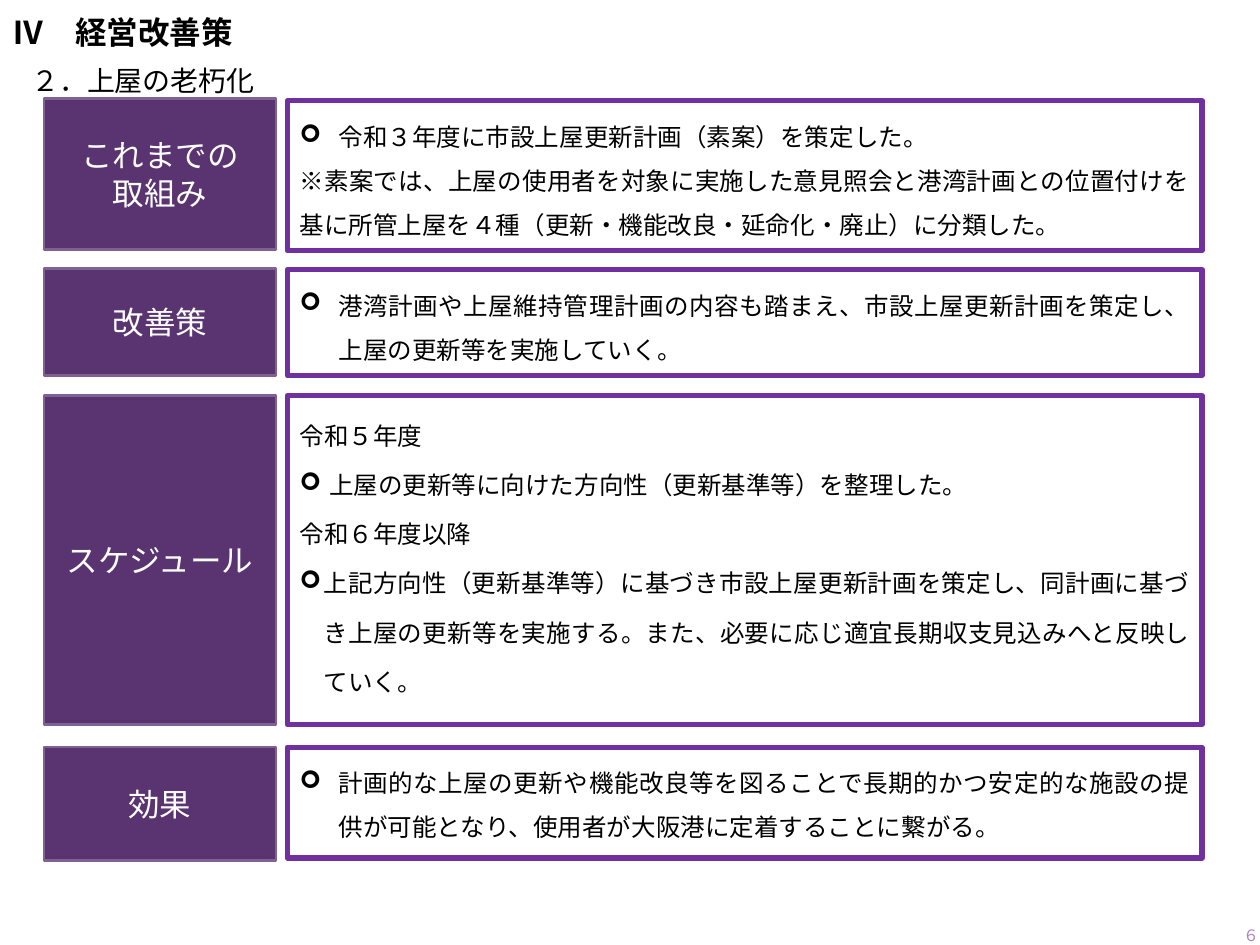
import pptx
import pptx.dml.color
import pptx.enum.lang
import pptx.enum.shapes
import pptx.enum.text
import pptx.oxml.ns
import pptx.util
from lxml import etree

Inches = pptx.util.Inches
Pt = pptx.util.Pt
Align = pptx.enum.text.PP_ALIGN
Anchor = pptx.enum.text.MSO_ANCHOR
qn = pptx.oxml.ns.qn


def color(value):
    return pptx.dml.color.RGBColor.from_string(value)


class PlanSlide:
    """Holds the style of the plan and the slide being filled."""

    ASIAN_FONT = "Noto Sans CJK JP"
    BLACK, WHITE, PAGE = "000000", "FFFFFF", "AD84C6"
    LABEL_FILL, LABEL_LINE, PANEL_LINE = "5A3471", "806292", "7030A0"
    LABEL_LEFT, LABEL_WIDTH = 0.35, 1.84
    PANEL_LEFT, PANEL_WIDTH = 2.28, 7.26

    def __init__(self, deck):
        self.slide = deck.slides.add_slide(deck.slide_layouts[6])

    def paragraph(self, frame, text, size, ink, font="Arial", align=None,
                  bold=False, spacing=None, indent=0):
        """Add a paragraph; a non-zero indent makes it a hanging arrow bullet."""
        first = frame.paragraphs[0]
        paragraph = first if not first.runs else frame.add_paragraph()
        paragraph.alignment = align
        if spacing:
            paragraph.line_spacing = spacing
        if indent:
            props = paragraph._p.get_or_add_pPr()
            props.set("marL", str(Inches(indent)))
            props.set("indent", str(-Inches(indent)))
            etree.SubElement(props, qn("a:buFont")).set("typeface", "Wingdings")
            etree.SubElement(props, qn("a:buChar")).set("char", "➢")
        run = paragraph.add_run()
        run.text = text
        run.font.size = Pt(size)
        run.font.bold = bold
        run.font.color.rgb = color(ink)
        run.font.name = font
        run.font.language_id = pptx.enum.lang.MSO_LANGUAGE_ID.JAPANESE
        asian = etree.SubElement(run._r.get_or_add_rPr(), qn("a:ea"))
        asian.set("typeface", self.ASIAN_FONT)

    def text(self, box, words, size, ink, anchor=Anchor.TOP, **style):
        frame = self.slide.shapes.add_textbox(*map(Inches, box)).text_frame
        frame.word_wrap = True
        frame.vertical_anchor = anchor
        self.paragraph(frame, words, size, ink, **style)

    def rectangle(self, box, fill, line, weight, anchor):
        shape = self.slide.shapes.add_shape(
            pptx.enum.shapes.MSO_SHAPE.RECTANGLE, *map(Inches, box))
        shape.shadow.inherit = False
        if fill:
            shape.fill.solid()
            shape.fill.fore_color.rgb = color(fill)
        else:
            shape.fill.background()
        shape.line.color.rgb = color(line)
        shape.line.width = Pt(weight)
        shape.text_frame.word_wrap = True
        shape.text_frame.vertical_anchor = anchor
        return shape.text_frame

    def label(self, top, height, lines):
        frame = self.rectangle((self.LABEL_LEFT, top, self.LABEL_WIDTH, height),
                               self.LABEL_FILL, self.LABEL_LINE, 1.5, Anchor.MIDDLE)
        for line in lines:
            self.paragraph(frame, line, 18, self.WHITE, "Quicksand", Align.CENTER)

    def panel(self, top, height, items, spacing, font="Arial"):
        """Add an outlined box; items are (text, bullet indent) pairs."""
        frame = self.rectangle((self.PANEL_LEFT, top, self.PANEL_WIDTH, height),
                               None, self.PANEL_LINE, 3, Anchor.TOP)
        for words, indent in items:
            self.paragraph(frame, words, 14, self.BLACK, font, Align.JUSTIFY,
                           spacing=spacing, indent=indent)


WIDE, NARROW = 0.31, 0.19

EFFORTS = [
    ("令和３年度に市設上屋更新計画（素案）を策定した。", WIDE),
    ("※素案では、上屋の使用者を対象に実施した意見照会と港湾計画との位置付けを"
     "基に所管上屋を４種（更新・機能改良・延命化・廃止）に分類した。", 0),
]
MEASURES = [
    ("港湾計画や上屋維持管理計画の内容も踏まえ、市設上屋更新計画を策定し、"
     "上屋の更新等を実施していく。", WIDE),
]
SCHEDULE = [
    ("令和５年度", 0),
    (" 上屋の更新等に向けた方向性（更新基準等）を整理した。", NARROW),
    ("令和６年度以降", 0),
    ("上記方向性（更新基準等）に基づき市設上屋更新計画を策定し、同計画に基づ"
     "き上屋の更新等を実施する。また、必要に応じ適宜長期収支見込みへと反映し"
     "ていく。", NARROW),
]
EFFECTS = [
    ("計画的な上屋の更新や機能改良等を図ることで長期的かつ安定的な施設の提"
     "供が可能となり、使用者が大阪港に定着することに繋がる。", WIDE),
]

# label top and height, label lines, panel top and height, items, spacing, font
SECTIONS = [
    (0.78, 1.2, ["これまでの", "取組み"], 0.8, 1.19, EFFORTS, 1.5, "Arial"),
    (2.13, 0.85, ["改善策"], 2.14, 0.84, MEASURES, 1.5, "Arial"),
    (3.14, 2.61, ["スケジュール"], 3.14, 2.61, SCHEDULE, Pt(28), "Arial"),
    (5.93, 0.9, ["効果"], 5.93, 0.88, EFFECTS, 1.5, PlanSlide.ASIAN_FONT),
]


def main():
    deck = pptx.Presentation()
    deck.slide_width, deck.slide_height = Inches(10), Inches(7.5)
    plan = PlanSlide(deck)
    plan.text((0, 0.05, 8.62, 0.68), "Ⅳ　経営改善策", 18, plan.BLACK, bold=True)
    plan.text((0.15, 0.19, 7.06, 0.64), "２．上屋の老朽化", 16, plan.BLACK,
              align=Align.JUSTIFY, spacing=2.0)
    for top, height, lines, panel_top, panel_height, items, spacing, font in SECTIONS:
        plan.label(top, height, lines)
        plan.panel(panel_top, panel_height, items, spacing, font)
    plan.text((9.53, 7.22, 0.56, 0.4), "６", 9, plan.PAGE, Anchor.MIDDLE,
              font="Quicksand", align=Align.RIGHT)
    deck.save("out.pptx")


if __name__ == "__main__":
    main()
